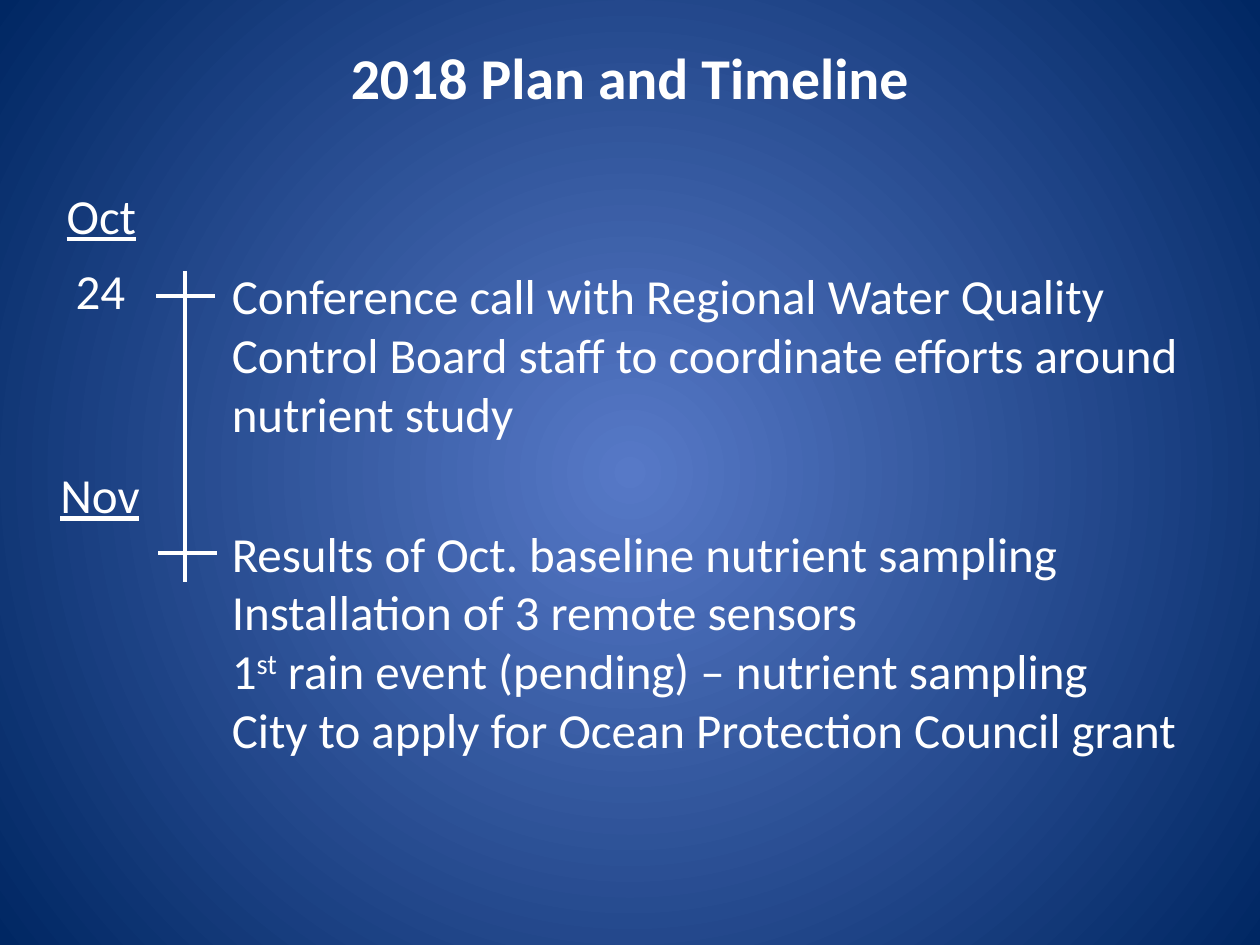
from lxml.etree import SubElement
from pptx import Presentation
from pptx.dml.color import RGBColor
from pptx.enum.shapes import MSO_CONNECTOR as Connector
from pptx.enum.text import MSO_ANCHOR as Anchor, PP_ALIGN as Align
from pptx.oxml.ns import qn
from pptx.util import Pt

COLORS = {"text": "FFFFFF", "glow": "5779C7", "edge": "002763"}
TIGHT = (2.88, 2.88)
ROOMY = (7.2, 3.6)


class TimelineSlide:
    font_name = "Calibri"
    body_size = 28
    title_size = 33
    line_width = 2

    def __init__(self, deck):
        self.slide = deck.slides.add_slide(deck.slide_layouts[6])

    def color(self, name):
        return RGBColor.from_string(COLORS[name])

    def radial_background(self, center, edge):
        """Fill the background with a gradient that runs outward in circles."""
        fill = self.slide.background.fill
        fill.gradient()
        for stop, name in zip(fill.gradient_stops, (center, edge)):
            stop.color.rgb = self.color(name)
        gradient = self.slide.element.find(".//" + qn("a:gradFill"))
        gradient.remove(gradient.find(qn("a:lin")))
        circle = SubElement(gradient, qn("a:path"), {"path": "circle"})
        SubElement(circle, qn("a:fillToRect"),
                   dict.fromkeys("ltrb", "50000"))

    def text(self, content, left, top, width, height, insets=TIGHT,
             size=body_size, wrap=True, bold=None, underline=None,
             align=Align.LEFT, anchor=Anchor.TOP):
        box = self.slide.shapes.add_textbox(
            Pt(left), Pt(top), Pt(width), Pt(height))
        frame = box.text_frame
        frame.word_wrap = wrap
        frame.vertical_anchor = anchor
        frame.margin_left = frame.margin_right = Pt(insets[0])
        frame.margin_top = frame.margin_bottom = Pt(insets[1])
        frame.text = content
        for paragraph in frame.paragraphs:
            paragraph.alignment = align
            for run in paragraph.runs:
                self.style(run, size, bold, underline)
        return frame

    def style(self, run, size=body_size, bold=None, underline=None):
        font = run.font
        font.name, font.size = self.font_name, Pt(size)
        font.bold, font.underline = bold, underline
        font.color.rgb = self.color("text")

    def append_ordinal(self, paragraph, suffix, rest):
        """Add a raised suffix and the words that follow it."""
        for words, baseline in ((suffix, "30000"), (rest, "0")):
            run = paragraph.add_run()
            run.text = words
            self.style(run)
            run.font._element.set("baseline", baseline)

    def line(self, x1, y1, x2, y2):
        line = self.slide.shapes.add_connector(
            Connector.STRAIGHT, Pt(x1), Pt(y1), Pt(x2), Pt(y2))
        line.line.color.rgb = self.color("text")
        line.line.width = Pt(self.line_width)
        SubElement(line._element.spPr, qn("a:effectLst"))


def main():
    deck = Presentation()
    deck.slide_width, deck.slide_height = Pt(720), Pt(540)
    timeline = TimelineSlide(deck)
    timeline.radial_background("glow", "edge")

    timeline.text("2018 Plan and Timeline", 36, 20, 648, 47, ROOMY,
                  timeline.title_size, bold=True, align=Align.CENTER,
                  anchor=Anchor.MIDDLE)

    timeline.line(105.84, 154.8, 105.84, 332.64)
    tick_length = 33.4
    for tick_left, tick_y in ((89.28, 169.2), (90.4, 316)):
        timeline.line(tick_left, tick_y, tick_left + tick_length, tick_y)

    for month, left, top in (("Oct", 31, 102.24), ("Nov", 27.4, 262.1)):
        timeline.text(month, left, top, 61.2, 41, ROOMY,
                      wrap=False, underline=True)
    timeline.text("24", 40.3, 146.2, 36, 28, wrap=False)

    event_left, event_width = 129.6, 584
    timeline.text("Conference call with Regional Water Quality Control Board "
                  "staff to coordinate efforts around nutrient study",
                  event_left, 149, event_width, 133)
    november = timeline.text("\n".join((
        "Results of Oct. baseline nutrient sampling",
        "Installation of 3 remote sensors",
        "1",
        "City to apply for Ocean Protection Council grant",
    )), event_left, 296, event_width, 42)
    timeline.append_ordinal(november.paragraphs[2], "st",
                            " rain event (pending) – nutrient sampling")

    deck.save("out.pptx")


if __name__ == "__main__":
    main()
